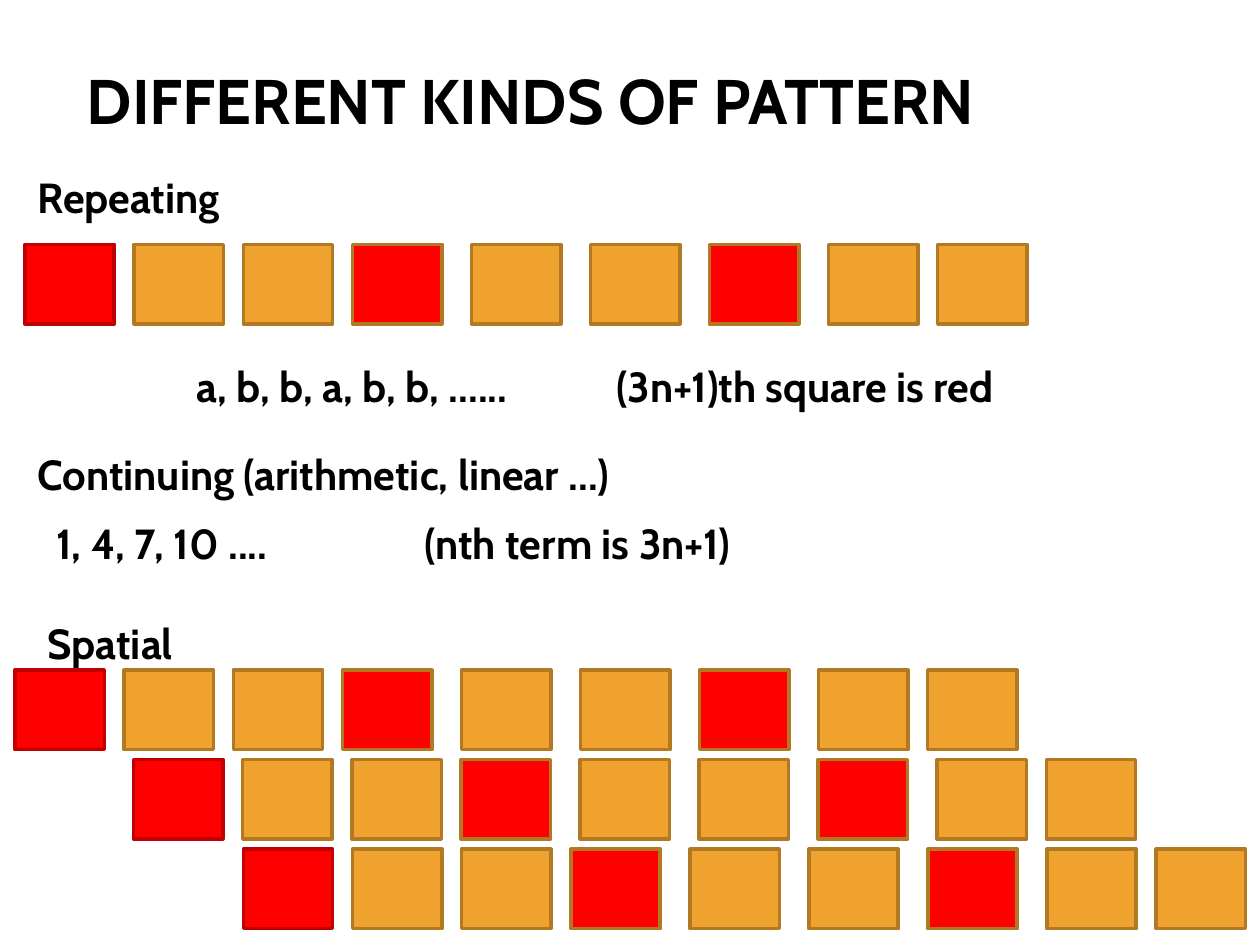
from dataclasses import dataclass
from itertools import accumulate

import pptx
import pptx.dml.color
import pptx.enum.shapes
import pptx.enum.text
import pptx.oxml
import pptx.oxml.ns
import pptx.util
from pptx.util import Pt

FONT = "Cabin"
BLACK, RED, GOLD = "000000", "FF0000", "F0A22E"
BROWN, DARK = "B27822", "C00000"
WIDE, HIGH = 51.1, 45.4
NEAR, FAR = 62.4, 68
STEPS = list(accumulate([0] + [NEAR] * 3 + [FAR] * 4 + [NEAR]))


@dataclass
class Label:
    left: float
    top: float
    width: float
    text: str
    size: float = 24
    height: float = 36
    tail: str = ""
    stop: float = 0


@dataclass
class Row:
    left: float
    top: float


LABELS = [
    Label(42.5, 31.7, 532.8, "DIFFERENT KINDS OF PATTERN", 36, 51),
    Label(14.4, 94.3, 193, "Repeating"),
    Label(105.1, 202.3, 504.7, "a, b, b, a, b, b, ......",
          tail="(3n+1)th square is red", stop=240),
    Label(14.4, 252.7, 351.4, "Continuing (arithmetic, linear ...)"),
    Label(25.2, 292.3, 612, "1, 4, 7, 10 ....",
          tail="(nth term is 3n+1)", stop=210.5),
    Label(20.2, 349.2, 193, "Spatial"),
]
ROWS = [Row(14.2, 139.7), Row(8.5, 383), Row(76.3, 434), Row(139, 485.3)]


def color(code: str) -> pptx.dml.color.RGBColor:
    return pptx.dml.color.RGBColor.from_string(code)


def add_run(para, text: str, size: float) -> None:
    run = para.add_run()
    run.text = text
    font = run.font
    font.name, font.size, font.bold = FONT, Pt(size), True
    font.color.rgb = color(BLACK)


def add_stop(para, stop: float) -> None:
    """Set one left tab stop, measured from the text edge."""
    tabs = pptx.oxml.parse_xml(
        f'<a:tabLst {pptx.oxml.ns.nsdecls("a")}>'
        f'<a:tab pos="{int(Pt(stop))}" algn="l"/></a:tabLst>')
    para._p.get_or_add_pPr().append(tabs)


def add_label(slide, label: Label) -> None:
    box = slide.shapes.add_textbox(
        Pt(label.left), Pt(label.top), Pt(label.width), Pt(label.height))
    frame = box.text_frame
    frame.word_wrap = True
    frame.auto_size = pptx.enum.text.MSO_AUTO_SIZE.SHAPE_TO_FIT_TEXT
    para = frame.paragraphs[0]
    add_run(para, label.text, label.size)
    if label.tail:
        add_stop(para, label.stop)
        add_run(para, "\t" + label.tail, label.size)


def add_row(slide, row: Row) -> None:
    """Draw a group of squares in which every third one is red."""
    group = slide.shapes.add_group_shape()
    for n, step in enumerate(STEPS):
        tile = group.shapes.add_shape(
            pptx.enum.shapes.MSO_SHAPE.RECTANGLE,
            Pt(row.left + step), Pt(row.top), Pt(WIDE), Pt(HIGH))
        tile.shadow.inherit = False
        tile.fill.solid()
        tile.fill.fore_color.rgb = color(GOLD if n % 3 else RED)
        tile.line.color.rgb = color(BROWN if n else DARK)
        tile.line.width = Pt(2)


def main() -> None:
    deck = pptx.Presentation()
    deck.slide_width, deck.slide_height = Pt(720), Pt(540)
    slide = deck.slides.add_slide(deck.slide_layouts[6])
    for label in LABELS:
        add_label(slide, label)
    for row in ROWS:
        add_row(slide, row)
    deck.save("out.pptx")


if __name__ == "__main__":
    main()
